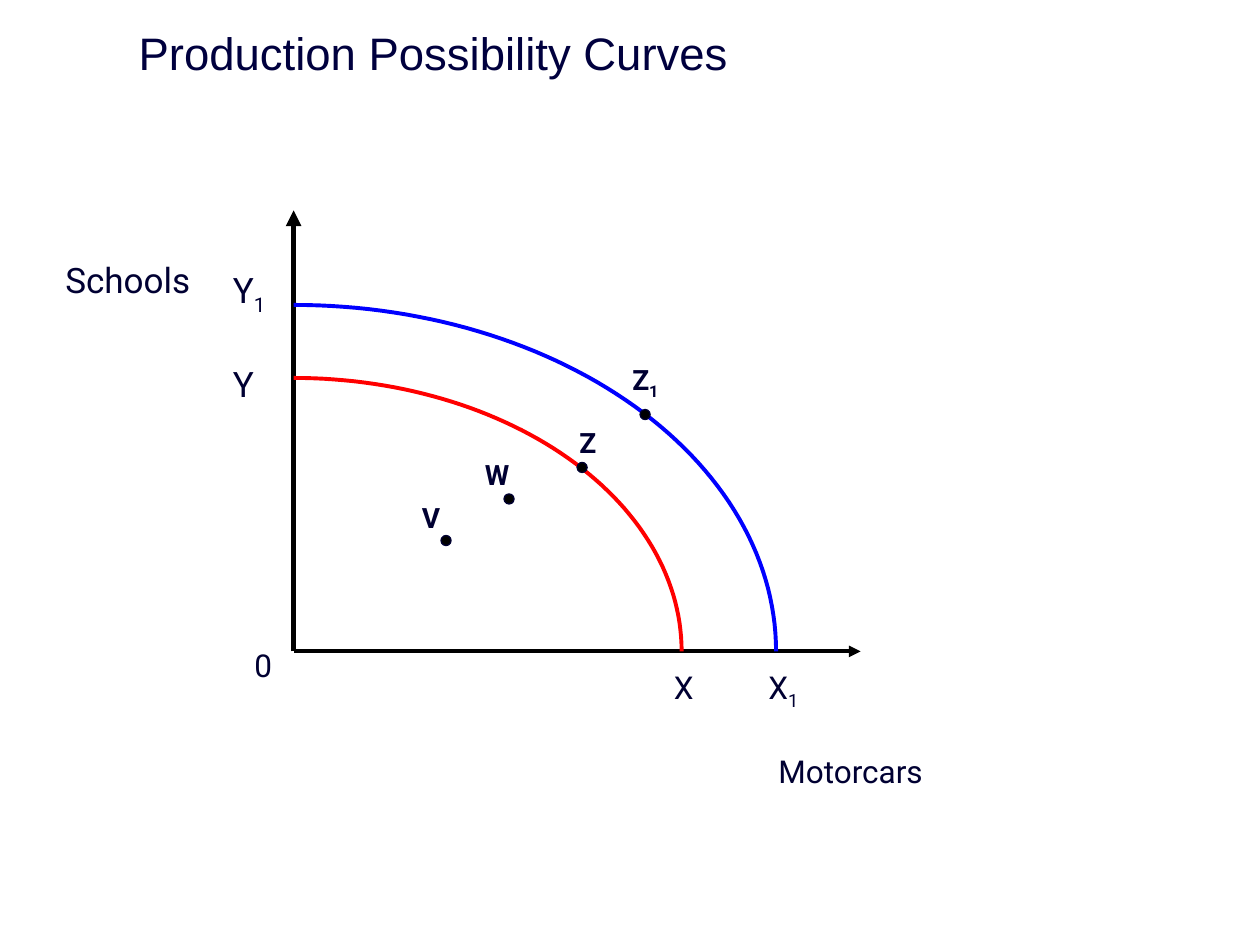
"""Build a slide of two production possibility curves on a pair of axes."""
from math import cos, pi, sin

from lxml import etree
from pptx import Presentation
from pptx.dml.color import RGBColor
from pptx.enum.shapes import MSO_CONNECTOR, MSO_SHAPE
from pptx.enum.text import MSO_ANCHOR, MSO_AUTO_SIZE, PP_ALIGN
from pptx.oxml.ns import qn
from pptx.util import Inches, Pt

STRAIGHT = MSO_CONNECTOR.STRAIGHT
OVAL = MSO_SHAPE.OVAL
MIDDLE = MSO_ANCHOR.MIDDLE
FIXED = MSO_AUTO_SIZE.NONE
LEFT = PP_ALIGN.LEFT

COLORS = {"axis": "000000", "inner": "FF0000", "outer": "0000FF",
          "text": "000032", "title": "00003E"}
ORIGIN = (2.33, 5.17)
STEPS = 60
DOT = 0.08

AXES = [((2.33, 1.67), 3), ((6.83, 5.17), 2.25)]
CURVES = [(3.08, 2.17, "inner"), (3.83, 2.75, "outer")]
DOTS = [(3.5, 4.25), (4, 3.92), (4.58, 3.67), (5.08, 3.25)]
LABELS = [
    ("Schools", "", 0.42, 2, 1.25, 0.73, 20, False),
    ("Motorcars", "", 6.08, 5.92, 1.75, 0.85, 18, False),
    ("Y", "1", 1.75, 2.08, 0.5, 0.43, 20, False),
    ("Y", "", 1.75, 2.83, 0.42, 0.43, 20, False),
    ("0", "", 1.92, 5.08, 0.58, 0.4, 18, False),
    ("X", "", 5.25, 5.25, 0.42, 0.4, 18, False),
    ("X", "1", 6, 5.25, 0.58, 0.4, 18, False),
    ("V", "", 3.25, 3.92, 0.42, 0.37, 16, True),
    ("W", "", 3.75, 3.58, 0.42, 0.37, 16, True),
    ("Z", "", 4.5, 3.33, 0.5, 0.37, 16, True),
    ("Z", "1", 4.92, 2.83, 0.75, 0.37, 16, True),
]


def color(name):
    """Return the named colour."""
    return RGBColor.from_string(COLORS[name])


def style(font, tone, **values):
    """Set the colour and the given values on a font."""
    font.color.rgb = color(tone)
    for name, value in values.items():
        setattr(font, name, value)


def add_title(slide, text):
    """Place and format the title."""
    title = slide.shapes.title
    spot = {"left": 1, "top": 0.16, "width": 9, "height": 0.51}
    for name, value in spot.items():
        setattr(title, name, Inches(value))
    frame = title.text_frame
    frame.text = text
    frame.auto_size = FIXED
    frame.vertical_anchor = MIDDLE
    line = frame.paragraphs[0]
    line.alignment = LEFT
    style(line.runs[0].font, "title", name="Arial", size=Pt(26))


def add_axis(slide, end, width):
    """Draw an arrow from the origin to the end point."""
    points = [Inches(v) for v in (*ORIGIN, *end)]
    axis = slide.shapes.add_connector(STRAIGHT, *points)
    axis.line.color.rgb = color("axis")
    axis.line.width = Pt(width)
    tip = etree.SubElement(axis.line._get_or_add_ln(), qn("a:tailEnd"))
    tip.set("type", "triangle")
    etree.SubElement(axis._element.spPr, qn("a:effectLst"))


def add_curve(slide, wide, high, tone):
    """Draw a quarter ellipse centred on the origin."""
    left, base = ORIGIN
    angles = [pi / 2 * i / STEPS for i in range(STEPS + 1)]
    points = [(Inches(left + wide * sin(a)), Inches(base - high * cos(a)))
              for a in angles]
    path = slide.shapes.build_freeform(*points[0])
    path.add_line_segments(points[1:], close=False)
    curve = path.convert_to_shape()
    curve.shadow.inherit = False
    curve.fill.background()
    curve.line.color.rgb = color(tone)
    curve.line.width = Pt(2.25)


def add_dot(slide, left, top):
    """Mark a point on the graph."""
    box = [Inches(v) for v in (left, top, DOT, DOT)]
    dot = slide.shapes.add_shape(OVAL, *box)
    dot.shadow.inherit = False
    dot.fill.solid()
    dot.fill.fore_color.rgb = color("axis")
    dot.line.color.rgb = color("text")
    dot.line.width = Pt(0.75)


def add_label(slide, text, sub, left, top, width, height, size, bold):
    """Add a label with an optional subscript."""
    box = [Inches(v) for v in (left, top, width, height)]
    frame = slide.shapes.add_textbox(*box).text_frame
    frame.word_wrap = True
    for part in filter(None, (text, sub)):
        run = frame.paragraphs[0].add_run()
        run.text = part
        style(run.font, "text", name="Roboto", size=Pt(size), bold=bold)
    if sub:
        run._r.get_or_add_rPr().set("baseline", "-25000")


def main():
    """Build and save the slide."""
    deck = Presentation()
    deck.slide_width, deck.slide_height = Inches(10), Inches(7.5)
    slide = deck.slides.add_slide(deck.slide_layouts[5])
    add_title(slide, "Production Possibility Curves")
    for add, rows in ((add_axis, AXES), (add_curve, CURVES),
                      (add_dot, DOTS), (add_label, LABELS)):
        for row in rows:
            add(slide, *row)
    deck.save("out.pptx")


if __name__ == "__main__":
    main()
